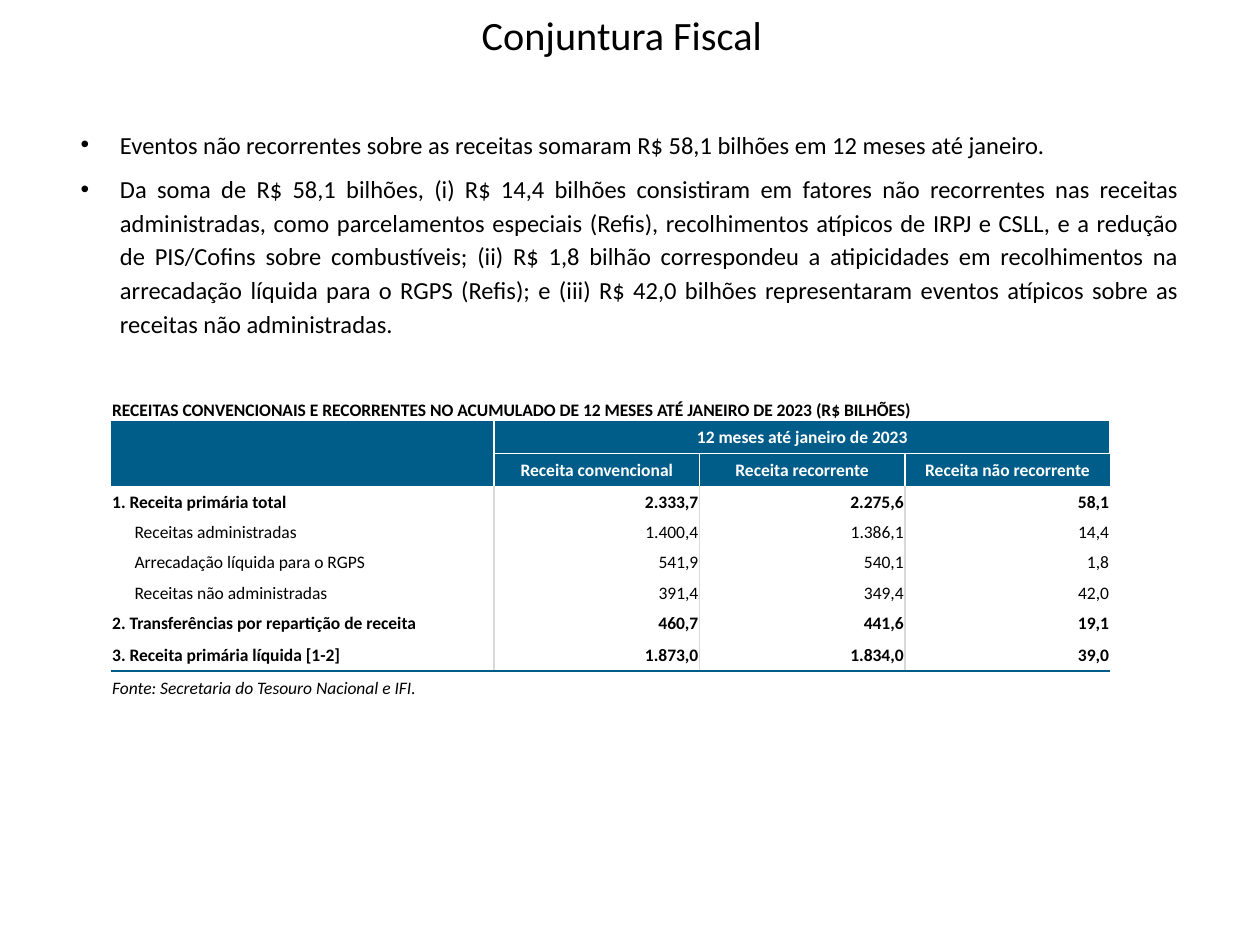
from dataclasses import dataclass

from lxml import etree
from pptx import Presentation
from pptx.dml.color import RGBColor
from pptx.enum import text as t
from pptx.oxml.ns import qn
from pptx.util import Pt


@dataclass(frozen=True)
class Theme:
    font: str = "Calibri"
    ink: str = "000000"
    paper: str = "FFFFFF"
    header: str = "005D89"
    grid: str = "D9D9D9"
    title_size: float = 23
    body_size: float = 14
    table_size: float = 10


THEME = Theme()

TOPICS = [
    "Eventos não recorrentes sobre as receitas somaram R$ 58,1 bilhões em 12 meses até janeiro.",
    "Da soma de R$ 58,1 bilhões, (i) R$ 14,4 bilhões consistiram em fatores não recorrentes nas receitas "
    "administradas, como parcelamentos especiais (Refis), recolhimentos atípicos de IRPJ e CSLL, e a redução "
    "de PIS/Cofins sobre combustíveis; (ii) R$ 1,8 bilhão correspondeu a atipicidades em recolhimentos na "
    "arrecadação líquida para o RGPS (Refis); e (iii) R$ 42,0 bilhões representaram eventos atípicos sobre as "
    "receitas não administradas.",
]

CAPTION = "RECEITAS CONVENCIONAIS E RECORRENTES NO ACUMULADO DE 12 MESES ATÉ JANEIRO DE 2023 (R$ BILHÕES)"
PERIOD = "12 meses até janeiro de 2023"
MEASURES = ["Receita convencional", "Receita recorrente", "Receita não recorrente"]
REVENUES = [
    ("1. Receita primária total", "2.333,7", "2.275,6", "58,1"),
    ("Receitas administradas", "1.400,4", "1.386,1", "14,4"),
    ("Arrecadação líquida para o RGPS", "541,9", "540,1", "1,8"),
    ("Receitas não administradas", "391,4", "349,4", "42,0"),
    ("2. Transferências por repartição de receita", "460,7", "441,6", "19,1"),
    ("3. Receita primária líquida [1-2]", "1.873,0", "1.834,0", "39,0"),
]
SOURCE = "Fonte: Secretaria do Tesouro Nacional e IFI."


def format_font(font, size, color, bold=False, italic=False):
    font.name = THEME.font
    font.size = Pt(size)
    font.color.rgb = RGBColor.from_string(color)
    font.bold = bold
    font.italic = italic


def add_text_frame(slide, box):
    frame = slide.shapes.add_textbox(*map(Pt, box)).text_frame
    frame.word_wrap = True
    return frame


def add_title(slide, box):
    frame = add_text_frame(slide, box)
    frame.vertical_anchor = t.MSO_ANCHOR.MIDDLE
    frame.text = "Conjuntura Fiscal"
    heading = frame.paragraphs[0]
    heading.alignment = t.PP_ALIGN.CENTER
    heading.line_spacing = 0.9
    format_font(heading.runs[0].font, THEME.title_size, THEME.ink)


def add_topics(slide, box, indent=22.5):
    frame = add_text_frame(slide, box)
    frame.text = "\n".join(TOPICS)
    for topic in frame.paragraphs:
        topic.alignment = t.PP_ALIGN.JUSTIFY
        topic.line_spacing = 1.15
        topic.space_after = Pt(6)
        props = topic._p.get_or_add_pPr()
        props.set("marL", str(Pt(indent)))
        props.set("indent", str(-Pt(indent)))
        etree.SubElement(props, qn("a:buFont")).set("typeface", "Arial")
        etree.SubElement(props, qn("a:buChar")).set("char", "•")
        format_font(topic.runs[0].font, THEME.body_size, THEME.ink)


def set_borders(cell, borders):
    props = cell._tc.get_or_add_tcPr()
    for position, side in enumerate("LRTB"):
        edge = etree.Element(qn(f"a:ln{side}"))
        color, width = borders.get(side, (None, 1))
        edge.set("w", str(Pt(width)))
        if color:
            fill = etree.SubElement(edge, qn("a:solidFill"))
            etree.SubElement(fill, qn("a:srgbClr")).set("val", color)
        else:
            etree.SubElement(edge, qn("a:noFill"))
        props.insert(position, edge)


def fill_cell(cell, words, align, color=THEME.ink, bold=False, italic=False,
              left=0.7, anchor=t.MSO_ANCHOR.MIDDLE):
    cell.margin_left, cell.margin_right = Pt(left), Pt(0.7)
    cell.margin_top, cell.margin_bottom = Pt(0.7), Pt(0)
    cell.vertical_anchor = anchor
    cell.text = words
    line = cell.text_frame.paragraphs[0]
    line.alignment = align
    format_font(line.font, THEME.table_size, color, bold, italic)
    for run in line.runs:
        format_font(run.font, THEME.table_size, color, bold, italic)


def borders_at(row, col, last_row, last_col):
    white, gray, rule = (THEME.paper, 1), (THEME.grid, 1), (THEME.header, 1.5)
    if row == 0:
        return {}
    if row > last_row:
        return {"T": rule}
    inner = white if row < 3 else gray
    borders = {}
    if col > 0:
        borders["L"] = inner
    if col < last_col:
        borders["R"] = inner
    if row < 3:
        borders["B"] = white
    if row in (2, 3):
        borders["T"] = white
    if row == last_row:
        borders["B"] = rule
    return borders


def add_revenue_table(slide, box):
    left, top, width, height = box
    label_width, low, tall = 218.9, 17.4, 18.7
    measure_width = (width - label_width) / len(MEASURES)
    row_heights = [low, tall, tall] + [low] * 5 + [tall, tall]
    last_col = len(MEASURES)
    last_row = len(REVENUES) + 2
    table = slide.shapes.add_table(len(row_heights), last_col + 1,
                                   Pt(left), Pt(top), Pt(width), Pt(height)).table
    table.first_row = table.horz_banding = False
    for col, column in enumerate(table.columns):
        column.width = Pt(measure_width if col else label_width)
    for row, row_height in enumerate(row_heights):
        table.rows[row].height = Pt(row_height)

    align = t.PP_ALIGN
    for row in range(len(row_heights)):
        for col in range(last_col + 1):
            cell = table.cell(row, col)
            fill_cell(cell, "", align.LEFT)
            cell.fill.solid()
            cell.fill.fore_color.rgb = RGBColor.from_string(
                THEME.header if row in (1, 2) else THEME.paper)
            set_borders(cell, borders_at(row, col, last_row, last_col))

    table.cell(0, 0).merge(table.cell(0, last_col))
    table.cell(1, 0).merge(table.cell(2, 0))
    table.cell(1, 1).merge(table.cell(1, last_col))

    fill_cell(table.cell(0, 0), CAPTION, align.LEFT, bold=True, anchor=t.MSO_ANCHOR.BOTTOM)
    fill_cell(table.cell(1, 1), PERIOD, align.CENTER, THEME.paper, bold=True)
    for col, measure in enumerate(MEASURES, 1):
        fill_cell(table.cell(2, col), measure, align.CENTER, THEME.paper, bold=True)
    for row, (label, *amounts) in enumerate(REVENUES, 3):
        is_total = label[0].isdigit()
        fill_cell(table.cell(row, 0), label, align.LEFT, bold=is_total,
                  left=0.7 if is_total else 13.5)
        for col, amount in enumerate(amounts, 1):
            fill_cell(table.cell(row, col), amount, align.RIGHT, bold=is_total)
    fill_cell(table.cell(last_row + 1, 0), SOURCE, align.JUSTIFY, italic=True)


def main():
    deck = Presentation()
    deck.slide_width, deck.slide_height = Pt(720), Pt(540)
    slide = deck.slides.add_slide(deck.slide_layouts[6])
    add_title(slide, (213, 0, 285, 42.5))
    add_topics(slide, (39, 68, 642, 130))
    add_revenue_table(slide, (63.4, 223.2, 571, 179.2))
    deck.save("out.pptx")


if __name__ == "__main__":
    main()
